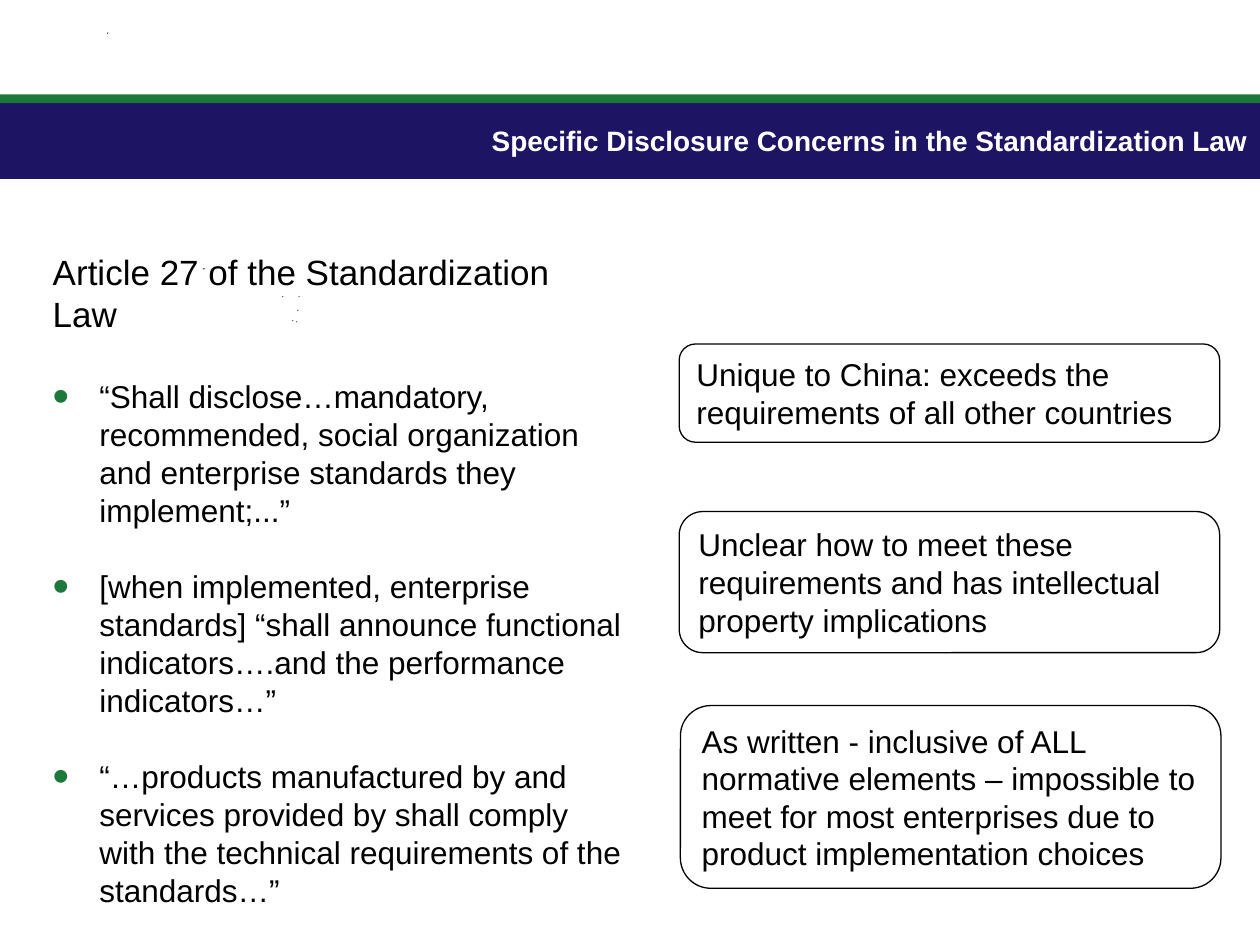
from pptx import Presentation
from pptx.dml.color import RGBColor
from pptx.enum import shapes, text
from pptx.oxml import parse_xml
from pptx.oxml.ns import nsdecls
from pptx.util import Inches, Pt

NAVY = RGBColor(0x1E, 0x14, 0x64)
GREEN = RGBColor(0x1E, 0x78, 0x3C)
INK = RGBColor(0x1B, 0x1A, 0x1B)
WHITE = RGBColor(0xFF, 0xFF, 0xFF)
BLACK = RGBColor(0, 0, 0)
FONT = "Arial"

TITLE = "Specific Disclosure Concerns in the Standardization Law"
HEADING = "Article 27 of the Standardization Law"
QUOTES = [
    "“Shall disclose…mandatory, recommended, social organization and enterprise "
    "standards they implement;...”",
    "[when implemented, enterprise standards] “shall announce functional "
    "indicators….and the performance indicators…”",
    "“…products manufactured by and services provided by shall comply with the "
    "technical requirements of the standards…”",
]
# left, top, height, comment
COMMENTS = [
    (5.39, 2.73, 0.78, "Unique to China: exceeds the requirements of all other countries"),
    (5.39, 4.06, 1.12, "Unclear how to meet these requirements and has intellectual "
                       "property implications"),
    (5.4, 5.6, 1.45, "As written - inclusive of ALL normative elements – impossible to "
                     "meet for most enterprises due to product implementation choices"),
]
COMMENT_WIDTH = 4.29
INDENT = 0.37
BANDS = [(0.77, 0.65, NAVY), (0.75, 0.07, GREEN)]  # top, height, colour
# left, top, width of the fine specks in the background
SPECKS = [(1.61, 2.13, 0.02), (2.37, 2.35, 0.01), (2.24, 2.35, 0.01), (2.32, 2.54, 0.01),
          (2.36, 2.46, 0.01), (2.35, 2.55, 0.01), (0.85, 0.26, 0.01)]
SPECK_HEIGHT = 0.01


def paint(sp, color):
    """Give a shape a plain fill, with no outline or shadow."""
    sp.shadow.inherit = False
    sp.fill.solid()
    sp.fill.fore_color.rgb = color
    sp.line.fill.background()


def add_shape(s, kind, *box):
    return s.shapes.add_shape(kind, *map(Inches, box))


def add_speck(s, left, top, width):
    right, bottom = left + width, top + SPECK_HEIGHT
    outline = s.shapes.build_freeform(Inches(left), Inches(top))
    outline.add_line_segments([(Inches(right), Inches(top)), (Inches(left), Inches(bottom))])
    paint(outline.convert_to_shape(), INK)


def add_text_box(s, *box):
    tf = s.shapes.add_textbox(*map(Inches, box)).text_frame
    tf.word_wrap = True
    return tf


def write(p, words, size, color=BLACK, bold=False, align=text.PP_ALIGN.LEFT,
          pitch=None, before=0):
    """Fill a paragraph; pitch is the line spacing and before the gap above, in points."""
    p.alignment = align
    p.space_before = Pt(before)
    if pitch:
        p.line_spacing = Pt(pitch)
    r = p.add_run()
    r.text = words
    r.font.name, r.font.size, r.font.bold = FONT, Pt(size), bold
    r.font.color.rgb = color


def add_bullet(p):
    pPr = p._p.get_or_add_pPr()
    pPr.set("marL", str(Inches(INDENT)))
    pPr.set("indent", str(-Inches(INDENT)))
    for xml in (f'<a:buClr {nsdecls("a")}><a:srgbClr val="{GREEN}"/></a:buClr>',
                f'<a:buSzPct {nsdecls("a")} val="150000"/>',
                f'<a:buFont {nsdecls("a")} typeface="{FONT}"/>',
                f'<a:buChar {nsdecls("a")} char="•"/>'):
        pPr.append(parse_xml(xml))


prs = Presentation()
prs.slide_width, prs.slide_height = Inches(10), Inches(7.5)
s = prs.slides.add_slide(prs.slide_layouts[6])

for speck in SPECKS:
    add_speck(s, *speck)
for top, height, color in BANDS:
    paint(add_shape(s, shapes.MSO_SHAPE.RECTANGLE, 0, top, 10, height), color)

tf = add_text_box(s, 0, 0.84, 10, 0.55)
tf.vertical_anchor = text.MSO_ANCHOR.MIDDLE
write(tf.paragraphs[0], TITLE, 16, WHITE, True, text.PP_ALIGN.RIGHT)

tf = add_text_box(s, 0.32, 1.94, 4.72, 4.65)
write(tf.paragraphs[0], HEADING, 20, pitch=24)
for i, quote in enumerate(QUOTES):
    p = tf.add_paragraph()
    add_bullet(p)
    write(p, quote, 18, pitch=21.7, before=21.8 if i else 24)

for left, top, height, comment in COMMENTS:
    sp = add_shape(s, shapes.MSO_SHAPE.ROUNDED_RECTANGLE, left, top, COMMENT_WIDTH, height)
    sp.shadow.inherit = False
    sp.fill.background()
    sp.line.color.rgb = BLACK
    sp.line.width = Pt(0.75)
    tf = sp.text_frame
    tf.word_wrap = True
    tf.vertical_anchor = text.MSO_ANCHOR.MIDDLE
    write(tf.paragraphs[0], comment, 18, pitch=21.5)

prs.save("out.pptx")
